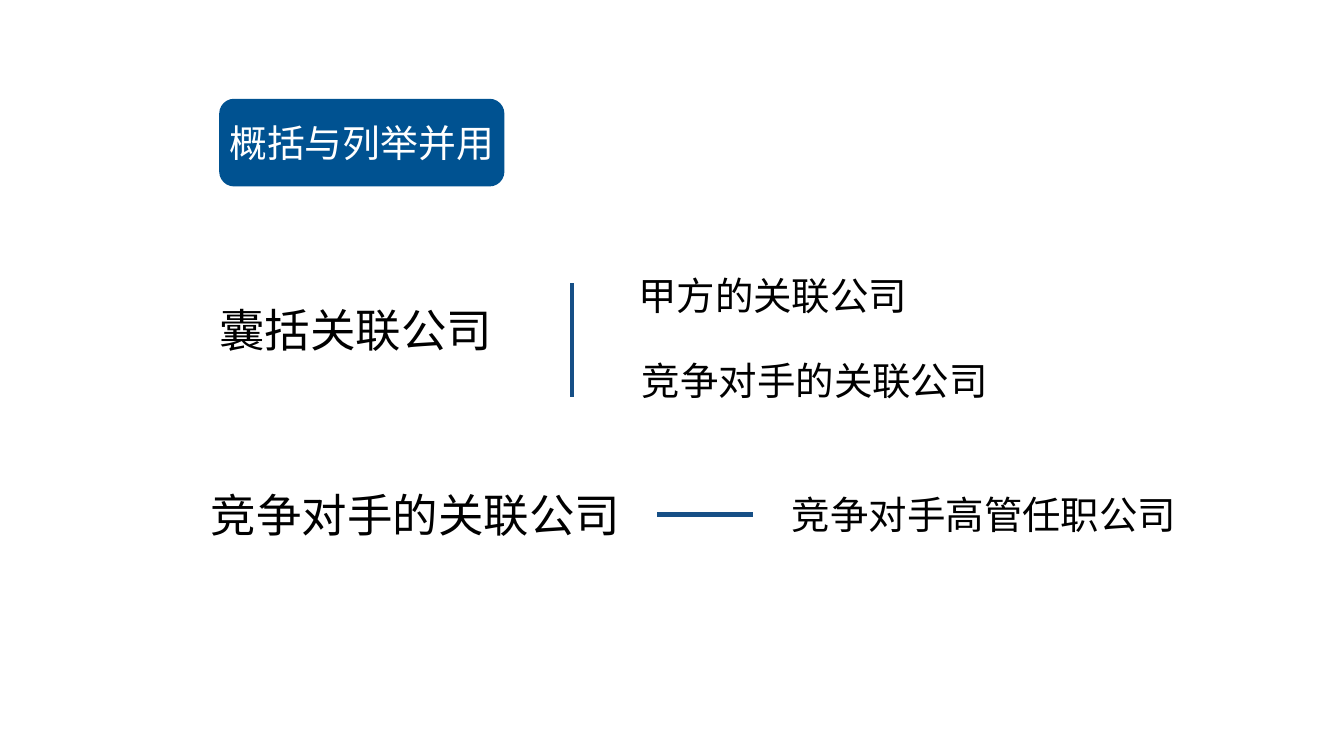
from lxml.etree import SubElement
from pptx import Presentation
from pptx.dml.color import RGBColor
from pptx.enum.shapes import MSO_CONNECTOR, MSO_SHAPE
from pptx.enum.text import MSO_ANCHOR, MSO_AUTO_SIZE, PP_ALIGN
from pptx.oxml.ns import qn
from pptx.util import Emu, Pt

FONT = "Noto Sans CJK SC"
TOPIC_SIZE, DETAIL_SIZE, TITLE_SIZE = 65, 55, 54


def px(n):
    """Convert px to EMU, at 100 px to the inch."""
    return Emu(n * 9144)


def color(hex_value):
    return RGBColor.from_string(hex_value)


def place(sp, box):
    sp.left, sp.top, sp.width, sp.height = map(px, box)


def write(sp, text, size, hex_value, inset=4, wrap=False):
    """Fill a shape with one centred line of text."""
    tf = sp.text_frame
    tf.auto_size = MSO_AUTO_SIZE.NONE
    tf.word_wrap = wrap
    tf.vertical_anchor = MSO_ANCHOR.MIDDLE
    tf.margin_left = tf.margin_right = px(inset)
    tf.margin_top = tf.margin_bottom = px(inset)
    p = tf.paragraphs[0]
    p.alignment = PP_ALIGN.CENTER
    r = p.add_run()
    r.text = text
    r.font.size = Pt(size)
    r.font.color.rgb = color(hex_value)
    r.font.name = FONT
    SubElement(r.font._element, qn("a:ea"), typeface=FONT)


def add_label(s, text, box, size):
    sp = s.shapes.add_textbox(*map(px, box))
    write(sp, text, size, "000000")


def add_line(s, x1, y1, x2, y2):
    line = s.shapes.add_connector(MSO_CONNECTOR.STRAIGHT, px(x1), px(y1), px(x2), px(y2))
    line.line.color.rgb = color("164F86")
    line.line.width = Pt(7)
    SubElement(line.element.spPr, qn("a:effectLst"))


def add_title(s, text, box):
    """Put the slide title on a rounded badge."""
    badge = s.shapes.add_shape(MSO_SHAPE.ROUNDED_RECTANGLE, *map(px, box))
    badge.adjustments[0] = 0.17
    badge.shadow.inherit = False
    badge.fill.solid()
    badge.fill.fore_color.rgb = color("005291")
    badge.line.fill.background()

    title = s.shapes.title
    place(title, (443, 241, 549, 85))
    write(title, text, TITLE_SIZE, "FFFFFF", inset=5, wrap=True)
    badge.element.addnext(title.element)


def main():
    prs = Presentation()
    prs.slide_width, prs.slide_height = px(2667), px(1500)
    s = prs.slides.add_slide(prs.slide_layouts[5])

    add_label(s, "囊括关联公司", (430, 604, 552, 100), TOPIC_SIZE)
    add_label(s, "甲方的关联公司", (1261, 542, 545, 86), DETAIL_SIZE)
    add_label(s, "竞争对手的关联公司", (1268, 712, 698, 86), DETAIL_SIZE)
    add_line(s, 1135, 787, 1135, 562)

    add_label(s, "竞争对手的关联公司", (413, 970, 823, 100), TOPIC_SIZE)
    add_label(s, "竞争对手高管任职公司", (1566, 977, 774, 86), DETAIL_SIZE)
    add_line(s, 1304, 1020, 1495, 1020)

    add_title(s, "概括与列举并用", (435, 196, 566, 174))
    prs.save("out.pptx")


if __name__ == "__main__":
    main()
